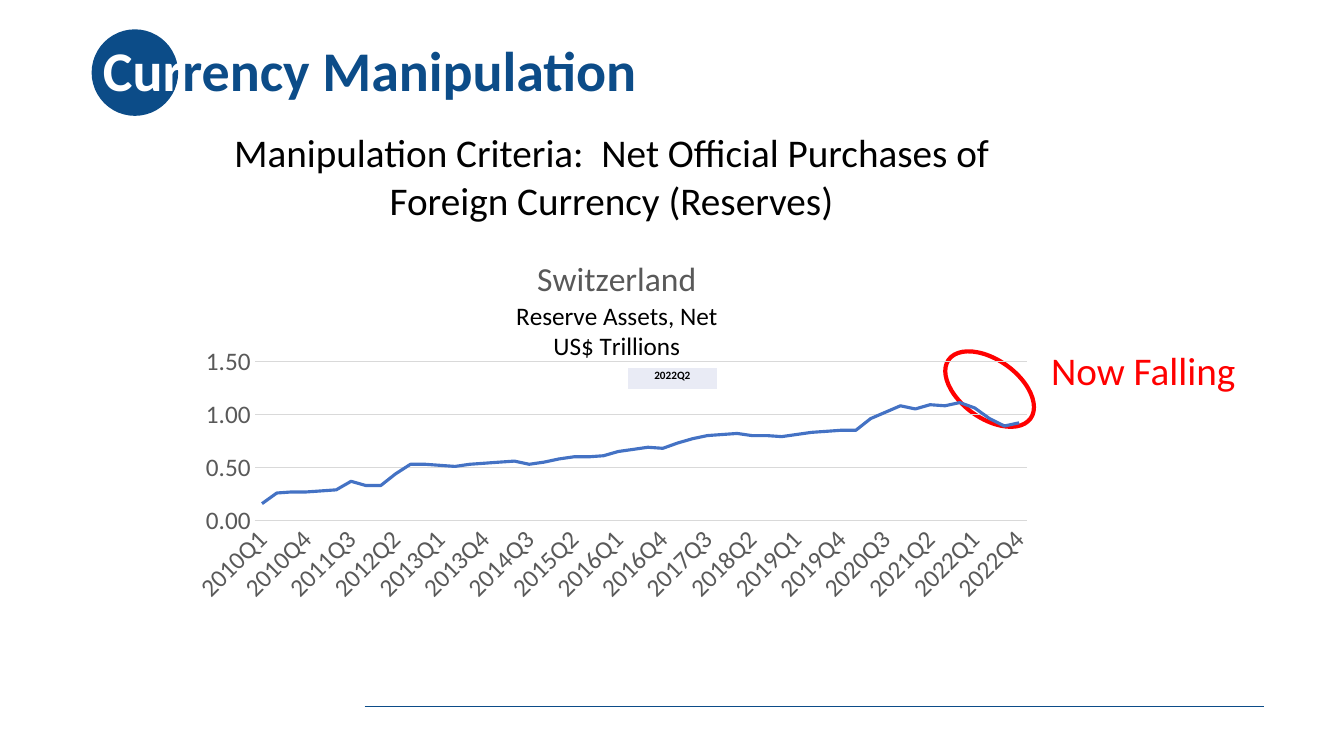
from dataclasses import dataclass

from lxml import etree
from pptx import Presentation
from pptx.chart.data import CategoryChartData
from pptx.dml.color import RGBColor
from pptx.enum import chart as ch, shapes, text
from pptx.oxml import ns
from pptx.util import Cm, Pt

NAVY = RGBColor(0x0C, 0x4C, 0x88)
WHITE = RGBColor(0xFF, 0xFF, 0xFF)
BLACK = RGBColor(0, 0, 0)
RED = RGBColor(0xFF, 0, 0)
GRAY = RGBColor(0x59, 0x59, 0x59)
GRID = RGBColor(0xD9, 0xD9, 0xD9)
BLUE = RGBColor(0x44, 0x72, 0xC4)
PALE = RGBColor(0xE9, 0xEB, 0xF5)
FONT = "Calibri"

RESERVES = [
    0.16, 0.26, 0.27, 0.27, 0.28, 0.29, 0.37, 0.33, 0.33, 0.44, 0.53, 0.53, 0.52,
    0.51, 0.53, 0.54, 0.55, 0.56, 0.53, 0.55, 0.58, 0.6, 0.6, 0.61, 0.65, 0.67,
    0.69, 0.68, 0.73, 0.77, 0.8, 0.81, 0.82, 0.8, 0.8, 0.79, 0.81, 0.83, 0.84,
    0.85, 0.85, 0.96, 1.02, 1.08, 1.05, 1.09, 1.08, 1.11, 1.06, 0.96, 0.89, 0.92,
]


@dataclass
class Label:
    words: str
    left: float
    top: float
    width: float
    height: float
    color: RGBColor
    align: text.PP_ALIGN


@dataclass
class Oval:
    left: float
    top: float
    width: float
    height: float
    fill: RGBColor | None
    line: RGBColor | None
    rotation: float = 0


LABELS = [
    Label("Manipulation Criteria:  Net Official Purchases of Foreign Currency (Reserves)",
          5.54, 3.12, 19.74, 2.64, BLACK, text.PP_ALIGN.CENTER),
    Label("Now Falling", 26.24, 8.59, 5.3, 1.45, RED, text.PP_ALIGN.LEFT),
]
TITLE_CIRCLE = Oval(2.31, 0.74, 2.18, 2.18, NAVY, None)
FALL_MARKER = Oval(23.67, 9.07, 2.54, 1.47, None, RED, 35.6)


def style(font, size: float, color: RGBColor, bold: bool = False) -> None:
    font.name, font.size, font.bold = FONT, Pt(size), bold
    font.color.rgb = color


def add_run(p, words: str, size: float, color: RGBColor, bold: bool = False) -> None:
    r = p.add_run()
    r.text = words
    style(r.font, size, color, bold)


def add_label(s, label: Label) -> None:
    box = s.shapes.add_textbox(Cm(label.left), Cm(label.top), Cm(label.width), Cm(label.height))
    tf = box.text_frame
    tf.word_wrap = True
    p = tf.paragraphs[0]
    p.alignment = label.align
    add_run(p, label.words, 28, label.color)


def add_oval(s, oval: Oval) -> None:
    sp = s.shapes.add_shape(shapes.MSO_SHAPE.OVAL, Cm(oval.left), Cm(oval.top),
                            Cm(oval.width), Cm(oval.height))
    sp.shadow.inherit = False
    sp.rotation = oval.rotation
    if oval.fill is None:
        sp.fill.background()
    else:
        sp.fill.solid()
        sp.fill.fore_color.rgb = oval.fill
    if oval.line is None:
        sp.line.fill.background()
    else:
        sp.line.color.rgb = oval.line
        sp.line.width = Pt(3)


def set_layout(parent, index: int, **values) -> None:
    """Place a chart part by fractions of the chart area."""
    for old in parent.findall(ns.qn("c:layout")):
        parent.remove(old)
    layout = etree.Element(ns.qn("c:layout"))
    manual = etree.SubElement(layout, ns.qn("c:manualLayout"))
    for tag, value in values.items():
        etree.SubElement(manual, ns.qn(f"c:{tag}")).set("val", str(value))
    parent.insert(index, layout)


def clear_fill():
    sp_pr = etree.Element(ns.qn("c:spPr"))
    etree.SubElement(sp_pr, ns.qn("a:noFill"))
    line = etree.SubElement(sp_pr, ns.qn("a:ln"))
    etree.SubElement(line, ns.qn("a:noFill"))
    return sp_pr


def add_quarter_table(s) -> None:
    frame = s.shapes.add_table(1, 1, Cm(15.8), Cm(9.25), Cm(2.29), Cm(0.56))
    cell = frame.table.cell(0, 0)
    cell.margin_left = cell.margin_right = cell.margin_top = Cm(0.03)
    cell.margin_bottom = 0
    p = cell.text_frame.paragraphs[0]
    p.alignment = text.PP_ALIGN.CENTER
    add_run(p, "2022Q2", 8, BLACK, True)
    tc_pr = cell._tc.get_or_add_tcPr()
    for side in ("lnL", "lnR", "lnT", "lnB"):
        border = etree.SubElement(tc_pr, ns.qn(f"a:{side}"), w=str(Pt(1)))
        fill = etree.SubElement(border, ns.qn("a:solidFill"))
        etree.SubElement(fill, ns.qn("a:srgbClr"), val=str(WHITE))
    cell.fill.solid()
    cell.fill.fore_color.rgb = PALE


def add_reserves_chart(s) -> None:
    data = CategoryChartData()
    data.categories = [f"{year}Q{q}" for year in range(2010, 2023) for q in range(1, 5)]
    data.add_series("Series 1", RESERVES)
    chart = s.shapes.add_chart(ch.XL_CHART_TYPE.LINE, Cm(4.65), Cm(5.92),
                               Cm(21.79), Cm(10.16), data).chart
    style(chart.font, 10, BLACK)
    chart.has_legend = False

    # Chart title
    chart.has_title = True
    tf = chart.chart_title.text_frame
    lines = [("Switzerland", 24, GRAY), ("Reserve Assets, Net", 18, BLACK),
             ("US$ Trillions", 18, BLACK)]
    for i, (words, size, color) in enumerate(lines):
        p = tf.add_paragraph() if i else tf.paragraphs[0]
        add_run(p, words, size, color)
    set_layout(chart.chart_title._element, 1, xMode="edge", yMode="edge", x=0.38, y=0.05)

    # Axes
    for axis in (chart.category_axis, chart.value_axis):
        axis.major_tick_mark = axis.minor_tick_mark = ch.XL_TICK_MARK.NONE
        style(axis.tick_labels.font, 18, GRAY)
    chart.category_axis.format.line.color.rgb = GRID
    chart.category_axis.format.line.width = Pt(0.75)
    chart.category_axis._element.find(ns.qn("c:txPr")).find(ns.qn("a:bodyPr")).set("rot", "-2700000")
    values = chart.value_axis
    values.minimum_scale, values.maximum_scale, values.major_unit = 0, 1.5, 0.5
    values.format.line.fill.background()
    values.major_gridlines.format.line.color.rgb = GRID
    values.major_gridlines.format.line.width = Pt(0.75)
    values.tick_labels.number_format = "#,##0.00"
    values.tick_labels.number_format_is_linked = False

    # Series and plot area
    chart.plots[0].vary_by_categories = False
    series = chart.plots[0].series[0]
    series.smooth = False
    series.marker.style = ch.XL_MARKER_STYLE.NONE
    series.format.line.color.rgb = BLUE
    series.format.line.width = Pt(2.25)
    body = chart._chartSpace.find(ns.qn("c:chart"))
    plot_area = body.find(ns.qn("c:plotArea"))
    set_layout(plot_area, 0, layoutTarget="inner", xMode="edge", yMode="edge",
               x=0.081, y=0.313, w=0.893, h=0.396)
    plot_area.append(clear_fill())
    body.addnext(clear_fill())


def main() -> None:
    prs = Presentation()
    prs.slide_width, prs.slide_height = Cm(33.87), Cm(19.05)
    s = prs.slides.add_slide(prs.slide_layouts[5])

    # Footer rule and title circle, behind the title
    rule = s.shapes.add_connector(shapes.MSO_CONNECTOR.STRAIGHT,
                                  Cm(9.19), Cm(17.81), Cm(31.85), Cm(17.81))
    rule.line.color.rgb = NAVY
    rule.line.width = Pt(0.5)
    etree.SubElement(rule._element.spPr, ns.qn("a:effectLst"))
    add_oval(s, TITLE_CIRCLE)

    # Title
    title = s.shapes.title
    title.left, title.top, title.width, title.height = Cm(2.34), Cm(0), Cm(29.21), Cm(3.68)
    s.shapes._spTree.append(title._element)
    tf = title.text_frame
    tf.auto_size = text.MSO_AUTO_SIZE.NONE
    tf.vertical_anchor = text.MSO_ANCHOR.MIDDLE
    p = tf.paragraphs[0]
    p.alignment = text.PP_ALIGN.LEFT
    p.line_spacing = 0.9
    add_run(p, "Cur", 40, WHITE, True)
    add_run(p, "rency Manipulation", 40, NAVY, True)

    # Labels, marker, table and chart
    for label in LABELS:
        add_label(s, label)
    add_oval(s, FALL_MARKER)
    add_quarter_table(s)
    add_reserves_chart(s)
    prs.save("out.pptx")


if __name__ == "__main__":
    main()
